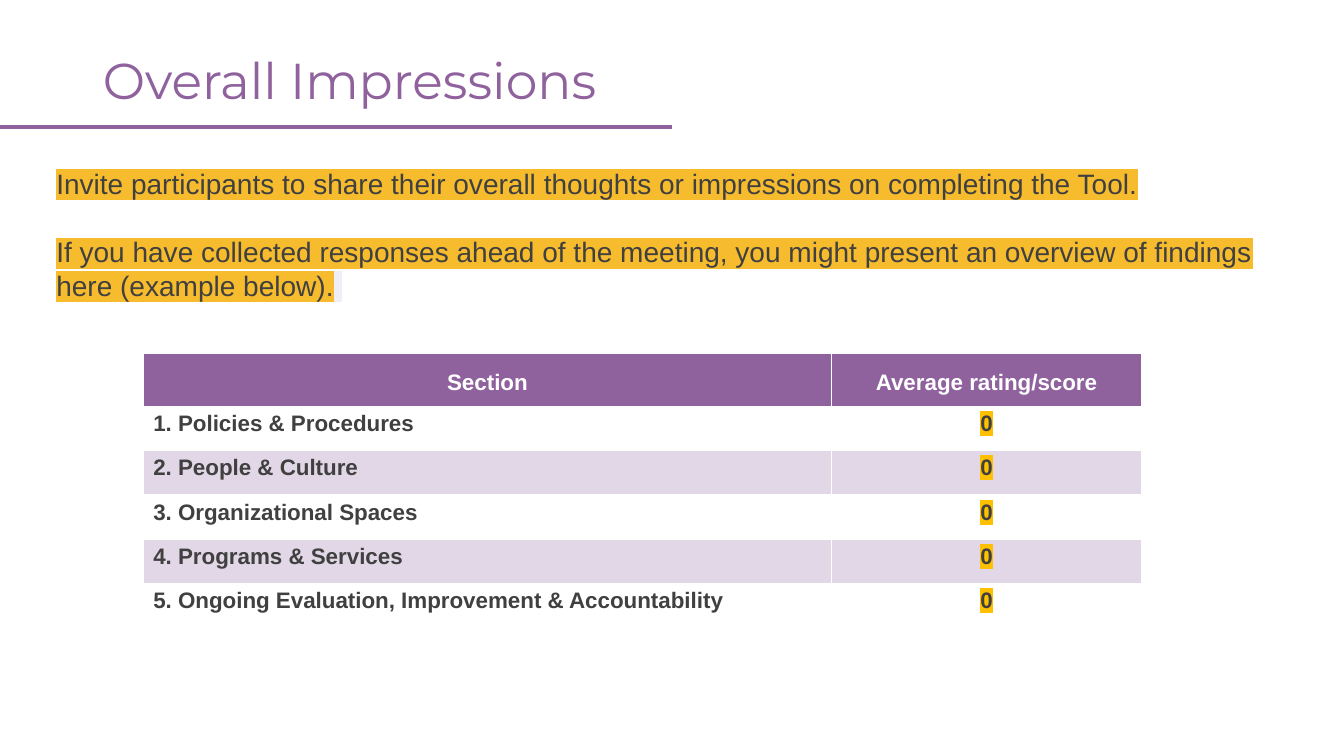
import pptx
import pptx.util
import pptx.dml.color
import pptx.enum.text
import pptx.enum.shapes
import pptx.oxml
import pptx.oxml.ns

Inches = pptx.util.Inches
Pt = pptx.util.Pt
ALIGN = pptx.enum.text.PP_ALIGN
PURPLE = "8F629E"
GREY = "404040"
NAMESPACE = pptx.oxml.ns.nsdecls("a")


def rgb(value):
    return pptx.dml.color.RGBColor.from_string(value)


def add_text(paragraph, text, size=16, color=GREY, font="Arial", bold=False,
             align=ALIGN.LEFT, highlight=None):
    paragraph.alignment = align
    run = paragraph.add_run()
    run.text = text
    run.font.size = Pt(size)
    run.font.bold = bold
    run.font.name = font
    run.font.color.rgb = rgb(color)
    if highlight:
        mark = pptx.oxml.parse_xml(
            f'<a:highlight {NAMESPACE}><a:srgbClr val="{highlight}"/></a:highlight>')
        run.font._element.find(pptx.oxml.ns.qn("a:solidFill")).addnext(mark)


presentation = pptx.Presentation()
presentation.slide_width = Inches(13.33)
presentation.slide_height = Inches(7.5)
slide = presentation.slides.add_slide(presentation.slide_layouts[5])

title = slide.shapes.title
title.left, title.top = Inches(0.92), Inches(0.4)
title.width, title.height = Inches(11.5), Inches(0.86)
title.text_frame.vertical_anchor = pptx.enum.text.MSO_ANCHOR.MIDDLE
title_paragraph = title.text_frame.paragraphs[0]
title_paragraph.line_spacing = 0.9
add_text(title_paragraph, "Overall Impressions", size=36, color=PURPLE, font="Montserrat")

instructions = slide.shapes.add_textbox(Inches(0.46), Inches(1.6), Inches(12.41), Inches(1.78))
text_frame = instructions.text_frame
text_frame.word_wrap = True
text_frame.auto_size = pptx.enum.text.MSO_AUTO_SIZE.SHAPE_TO_FIT_TEXT
add_text(text_frame.paragraphs[0],
         "Invite participants to share their overall thoughts or impressions on completing the Tool.",
         size=20, highlight="F7BC2E")
example = text_frame.add_paragraph()
example.space_before = Pt(25)
add_text(example,
         "If you have collected responses ahead of the meeting, you might present an overview "
         "of findings here (example below).",
         size=20, highlight="F7BC2E")
add_text(example, " ", size=20, highlight="F0EEF7")

rows = [
    ("Section", "Average rating/score"),
    ("1. Policies & Procedures", "0"),
    ("2. People & Culture", "0"),
    ("3. Organizational Spaces", "0"),
    ("4. Programs & Services", "0"),
    ("5. Ongoing Evaluation, Improvement & Accountability", "0"),
]
table = slide.shapes.add_table(len(rows), 2, Inches(1.42), Inches(3.51),
                               Inches(9.9), Inches(2.72)).table
table.columns[0].width = Inches(6.83)
table.columns[1].width = Inches(3.07)

for row_index, values in enumerate(rows):
    is_header = row_index == 0
    table.rows[row_index].height = Inches(0.52 if is_header else 0.44)
    for column_index, value in enumerate(values):
        cell = table.cell(row_index, column_index)
        paragraph = cell.text_frame.paragraphs[0]
        is_score = column_index == 1 and not is_header
        add_text(paragraph, value, bold=True,
                 color="FFFFFF" if is_header else GREY,
                 align=ALIGN.CENTER if is_header or is_score else ALIGN.LEFT,
                 highlight="FFC000" if is_score else None)
        if is_header:
            paragraph.line_spacing = Pt(26.2)
        properties = cell._tc.get_or_add_tcPr()
        if row_index % 2 and not is_header:
            cell.fill.background()
        else:
            cell.fill.solid()
            cell.fill.fore_color.rgb = rgb(PURPLE)
            if not is_header:
                fill_color = properties.find(".//" + pptx.oxml.ns.qn("a:srgbClr"))
                fill_color.append(pptx.oxml.parse_xml(f'<a:alpha {NAMESPACE} val="25000"/>'))
        for position, side in enumerate(("lnL", "lnR", "lnT", "lnB")):
            properties.insert(position, pptx.oxml.parse_xml(
                f'<a:{side} {NAMESPACE} w="{Pt(0.6)}"><a:solidFill>'
                f'<a:srgbClr val="FFFFFF"/></a:solidFill></a:{side}>'))

title_line = slide.shapes.add_connector(pptx.enum.shapes.MSO_CONNECTOR.STRAIGHT,
                                        Inches(0), Inches(1.26), Inches(6.67), Inches(1.26))
title_line.line.color.rgb = rgb(PURPLE)
title_line.line.width = Pt(2.25)
title_line._element.spPr.append(pptx.oxml.parse_xml(f"<a:effectLst {NAMESPACE}/>"))

presentation.save("out.pptx")
